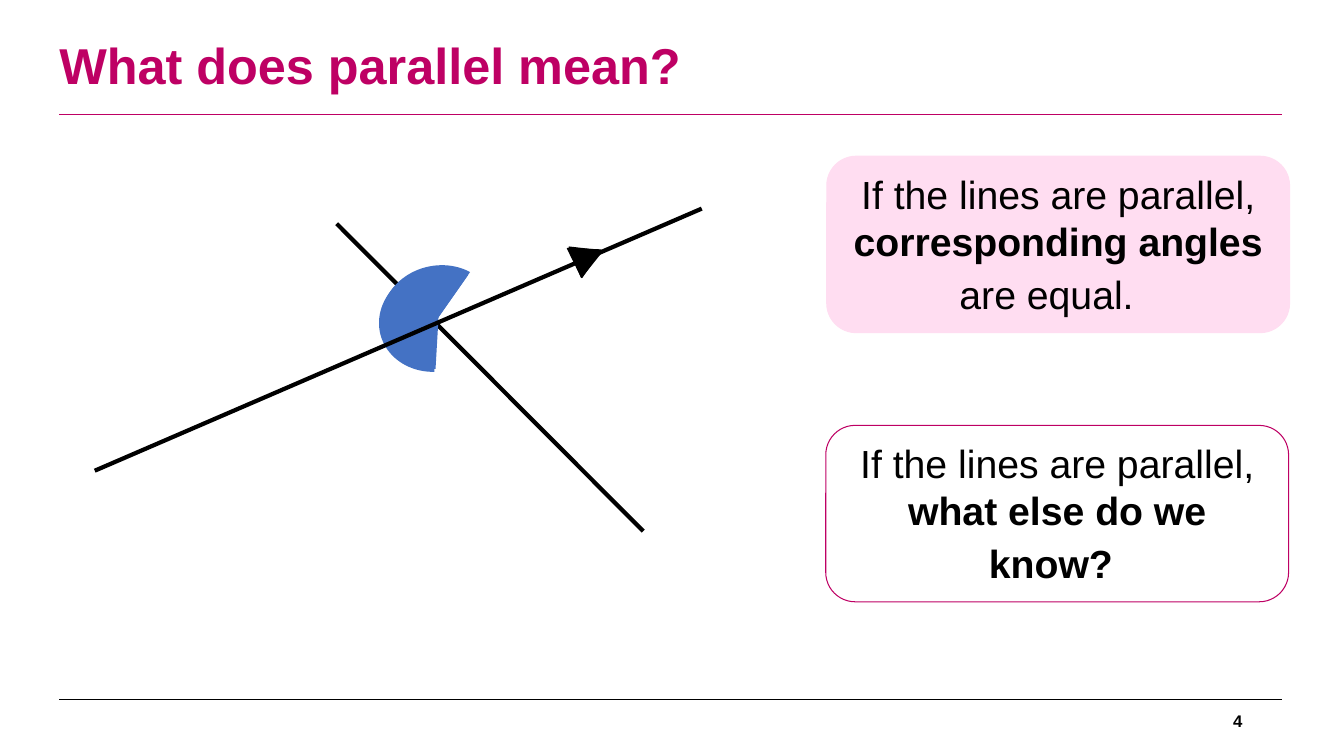
from pptx import Presentation
from pptx import util as u
from pptx.dml.color import RGBColor
from pptx.enum import shapes, text
from pptx.oxml.ns import qn
from lxml import etree

PX = 9144  # EMU in one px, 100 px to the inch
SLIDE_SIZE = (1333, 750)

THEME = {
    "font": "Arial",
    "black": "000000", "magenta": "BE0064", "pink": "FFDDF1", "blue": "4472C4",
    "title": 36, "body": 28, "gap": 32, "number": 12,
    "thin": 0.75, "outline": 1, "thick": 3,
}

# from x, from y, to x, to y, colour, weight
RULES = [
    (59, 694, 1272, 694, "black", "thin"),
    (59, 114, 1272, 114, "magenta", "thin"),
]
TRANSVERSAL = (638, 527, 334, 222, "black", "thick")
PARALLEL = (94, 467, 696, 207, "black", "thick")

# box, rotation, start and end angles
ANGLE_MARKS = [
    ((382, 260, 102, 115), 255.5, (197.04, 49.52)),
    ((384, 257, 102, 115), 255.5, (197.84, 49.52)),
]
# box, rotation
ARROW_MARKS = [
    ((567, 240, 32, 29), 63.9),
    ((568, 240, 32, 29), 67.7),
]

# words, type size, bold
TITLE = [("What does parallel mean?", "title", True)]
SLIDE_NUMBER = [("4", "number", True)]
OPENING = ("If the lines are parallel, ", "body", False)
# box, fill, line, runs
CARDS = [
    ((820, 155, 459, 175), "pink", "pink", [
        OPENING,
        ("corresponding angles", "body", True),
        (" are equal. ", "body", False),
        (" ", "gap", False),
    ]),
    ((819, 422, 459, 175), None, "magenta", [
        OPENING,
        ("what else do we know?", "body", True),
        (" ", "gap", False),
    ]),
]


def px(*lengths):
    return [u.Emu(length * PX) for length in lengths]


def colour(name):
    return RGBColor.from_string(THEME[name])


def set_all(target, values):
    for name, value in values.items():
        setattr(target, name, value)


def add_line(slide, x1, y1, x2, y2, line_colour, weight):
    line = slide.shapes.add_connector(
        shapes.MSO_CONNECTOR.STRAIGHT, *px(x1, y1, x2, y2))
    line.line.color.rgb = colour(line_colour)
    line.line.width = u.Pt(THEME[weight])
    etree.SubElement(line._element.spPr, qn("a:effectLst"))


def add_shape(slide, kind, box, fill=None, line=None, weight="thin", rotation=0):
    shape = slide.shapes.add_shape(kind, *px(*box))
    shape.shadow.inherit = False
    shape.rotation = rotation
    if fill:
        shape.fill.solid()
        shape.fill.fore_color.rgb = colour(fill)
    else:
        shape.fill.background()
    if line:
        shape.line.color.rgb = colour(line)
        shape.line.width = u.Pt(THEME[weight])
    else:
        shape.line.fill.background()
    return shape


def write(shape, runs, align, ink="black", **paragraph_format):
    frame = shape.text_frame
    set_all(frame, {"word_wrap": True,
                    "vertical_anchor": text.MSO_ANCHOR.MIDDLE})
    paragraph = frame.paragraphs[0]
    set_all(paragraph, {"alignment": align, **paragraph_format})
    for words, size, bold in runs:
        run = paragraph.add_run()
        run.text = words
        set_all(run.font, {"name": THEME["font"], "bold": bold,
                           "size": u.Pt(THEME[size])})
        run.font.color.rgb = colour(ink)


def add_angle_marks(slide):
    for box, rotation, angles in ANGLE_MARKS:
        pie = add_shape(slide, shapes.MSO_SHAPE.PIE, box, "blue",
                        rotation=rotation)
        for index, angle in enumerate(angles):
            # 60000 units to the degree, 100000 units to one adjustment
            pie.adjustments[index] = angle * 0.6


def add_arrow_mark(slide, box, rotation):
    add_shape(slide, shapes.MSO_SHAPE.ISOSCELES_TRIANGLE, box, "black", "black",
              "outline", rotation)


def main():
    presentation = Presentation()
    width, height = px(*SLIDE_SIZE)
    set_all(presentation, {"slide_width": width, "slide_height": height})
    slide = presentation.slides.add_slide(presentation.slide_layouts[6])

    for rule in RULES:
        add_line(slide, *rule)
    number = slide.shapes.add_textbox(*px(942, 695, 300, 40))
    write(number, SLIDE_NUMBER, text.PP_ALIGN.RIGHT)

    add_line(slide, *TRANSVERSAL)
    add_angle_marks(slide)
    add_arrow_mark(slide, *ARROW_MARKS[0])
    add_line(slide, *PARALLEL)
    add_arrow_mark(slide, *ARROW_MARKS[1])

    title = slide.shapes.add_textbox(*px(49, 12, 1000, 111))
    write(title, TITLE, text.PP_ALIGN.LEFT, "magenta", line_spacing=0.9)

    for box, fill, line, runs in CARDS:
        card = add_shape(slide, shapes.MSO_SHAPE.ROUNDED_RECTANGLE, box, fill, line)
        write(card, runs, text.PP_ALIGN.CENTER)
        card.text_frame.auto_size = text.MSO_AUTO_SIZE.SHAPE_TO_FIT_TEXT

    presentation.save("out.pptx")


if __name__ == "__main__":
    main()
